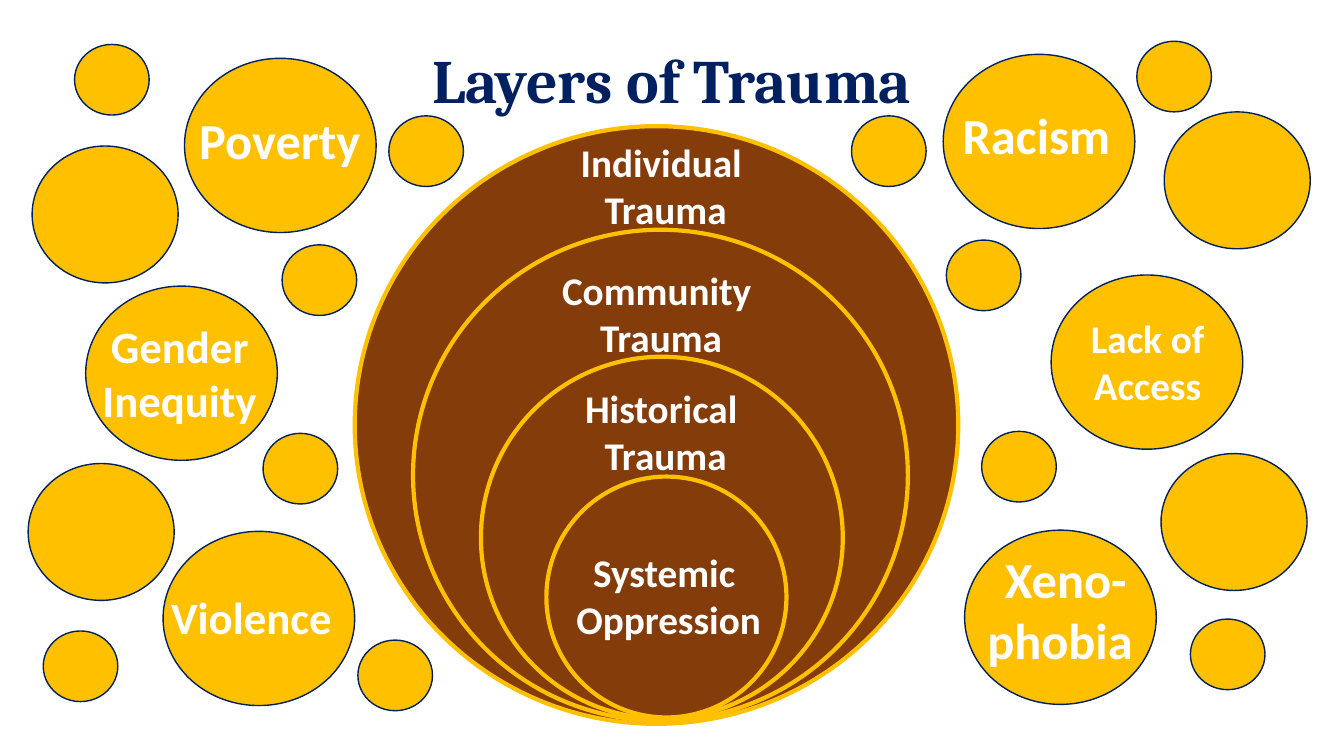
from pptx import Presentation
from pptx.dml.color import RGBColor
from pptx.enum import shapes, text
from pptx.util import Cm, Pt

GOLD, BROWN, NAVY, WHITE = "FFC000", "843C0B", "002060", "FFFFFF"
LARGE, MEDIUM, SMALL = (4.83, 4.39), (3.68, 3.45), (1.88, 1.78)
LABEL_WIDTH = 4.8

TITLE_BOX = (2.57, 0.23, 28.73, 3.76)
LAYERS_BOX = (8.94, 3.18)
LEFT_BOX = (0.71, 1.04)
RIGHT_BOX = (21.46, 1.04)

# Circle left, top, width, height; label left, top, width; lines
LAYERS = [
    ((0, 0, 15.21, 15.06), (3.58, 0.17, 8.51), ("Individual ", "Trauma")),
    ((1.47, 2.61, 12.47, 12.37), (4.62, 3.4, 6.2), ("Community ", "Trauma")),
    ((3.18, 5.81, 9.12, 9.12), (5.41, 6.37, 4.85), ("Historical ", "Trauma")),
    ((4.83, 8.83, 6.05, 6.07), (5.23, 10.51, 5.36), ("Systemic ", "Oppression")),
]

# Wording, font size, circle position, label offset, label height
LEFT_CAUSES = [
    ("Poverty", 36, (3.94, 0.43), (0, 1.15), 1.8),
    ("Gender Inequity", 32, (1.45, 6.17), (-0.03, 0.69), 3),
    ("Violence", 32, (3.4, 12.35), (-0.17, 1.34), 1.63),
]
LEFT_MEDIUM = [(0.1, 2.64), (0, 10.64)]
LEFT_SMALL = [(9.09, 1.88), (1.17, 0.08), (6.4, 5.13),
              (5.92, 9.88), (8.31, 15.09), (0.38, 14.86)]

RIGHT_CAUSES = [
    ("Racism", 36, (2.31, 0.33), (-0.05, 1.12), 1.8),
    ("Lack of Access", 28, (5.03, 5.89), (0.03, 0.87), 2.64),
    ("Xeno-phobia ", 36, (2.85, 12.32), (0.15, 0.33), 3.33),
]
RIGHT_MEDIUM = [(7.88, 1.78), (7.8, 10.39)]
RIGHT_SMALL = [(2.39, 5.01), (3.28, 9.83), (7.19, 0), (8.54, 14.56), (0, 1.88)]


def color(value):
    return RGBColor.from_string(value)


def add_span(para, wording, size, font, ink):
    para.alignment = text.PP_ALIGN.CENTER
    span = para.add_run()
    span.text = wording
    span.font.name = font
    span.font.size = Pt(size)
    span.font.bold = True
    span.font.color.rgb = color(ink)


def add_circle(page, left, top, width, height, fill, line, weight):
    circle = page.shapes.add_shape(
        shapes.MSO_SHAPE.OVAL, Cm(left), Cm(top), Cm(width), Cm(height))
    circle.shadow.inherit = False
    circle.fill.solid()
    circle.fill.fore_color.rgb = color(fill)
    circle.line.color.rgb = color(line)
    circle.line.width = Pt(weight)


def add_label(page, left, top, width, height, lines, size):
    box = page.shapes.add_textbox(Cm(left), Cm(top), Cm(width), Cm(height))
    frame = box.text_frame
    frame.word_wrap = True
    for index, line in enumerate(lines):
        para = frame.add_paragraph() if index else frame.paragraphs[0]
        add_span(para, line, size, "Calibri", WHITE)


def add_title(page, box):
    title = page.shapes.title
    title.left, title.top, title.width, title.height = map(Cm, box)
    title.text_frame.vertical_anchor = text.MSO_ANCHOR.MIDDLE
    para = title.text_frame.paragraphs[0]
    para.line_spacing = 0.9
    add_span(para, "Layers of Trauma", 44, "Cambria", NAVY)


def add_layers(page, box):
    x, y = box
    for (left, top, width, height), label, lines in LAYERS:
        add_circle(page, x + left, y + top, width, height, BROWN, GOLD, 3)
        label_left, label_top, label_width = label
        add_label(page, x + label_left, y + label_top, label_width, 2.64, lines, 28)


def add_bubbles(page, box, causes, medium, small):
    x, y = box
    large = [cause[2] for cause in causes]
    for size, places in ((LARGE, large), (MEDIUM, medium), (SMALL, small)):
        for left, top in places:
            add_circle(page, x + left, y + top, *size, GOLD, NAVY, 1)
    for wording, size, (left, top), (shift, drop), height in causes:
        add_label(page, x + left + shift, y + top + drop,
                  LABEL_WIDTH, height, [wording], size)


def main():
    deck = Presentation()
    deck.slide_width, deck.slide_height = Cm(33.87), Cm(19.05)
    page = deck.slides.add_slide(deck.slide_layouts[5])
    add_title(page, TITLE_BOX)
    add_layers(page, LAYERS_BOX)
    add_bubbles(page, LEFT_BOX, LEFT_CAUSES, LEFT_MEDIUM, LEFT_SMALL)
    add_bubbles(page, RIGHT_BOX, RIGHT_CAUSES, RIGHT_MEDIUM, RIGHT_SMALL)
    deck.save("out.pptx")


if __name__ == "__main__":
    main()
